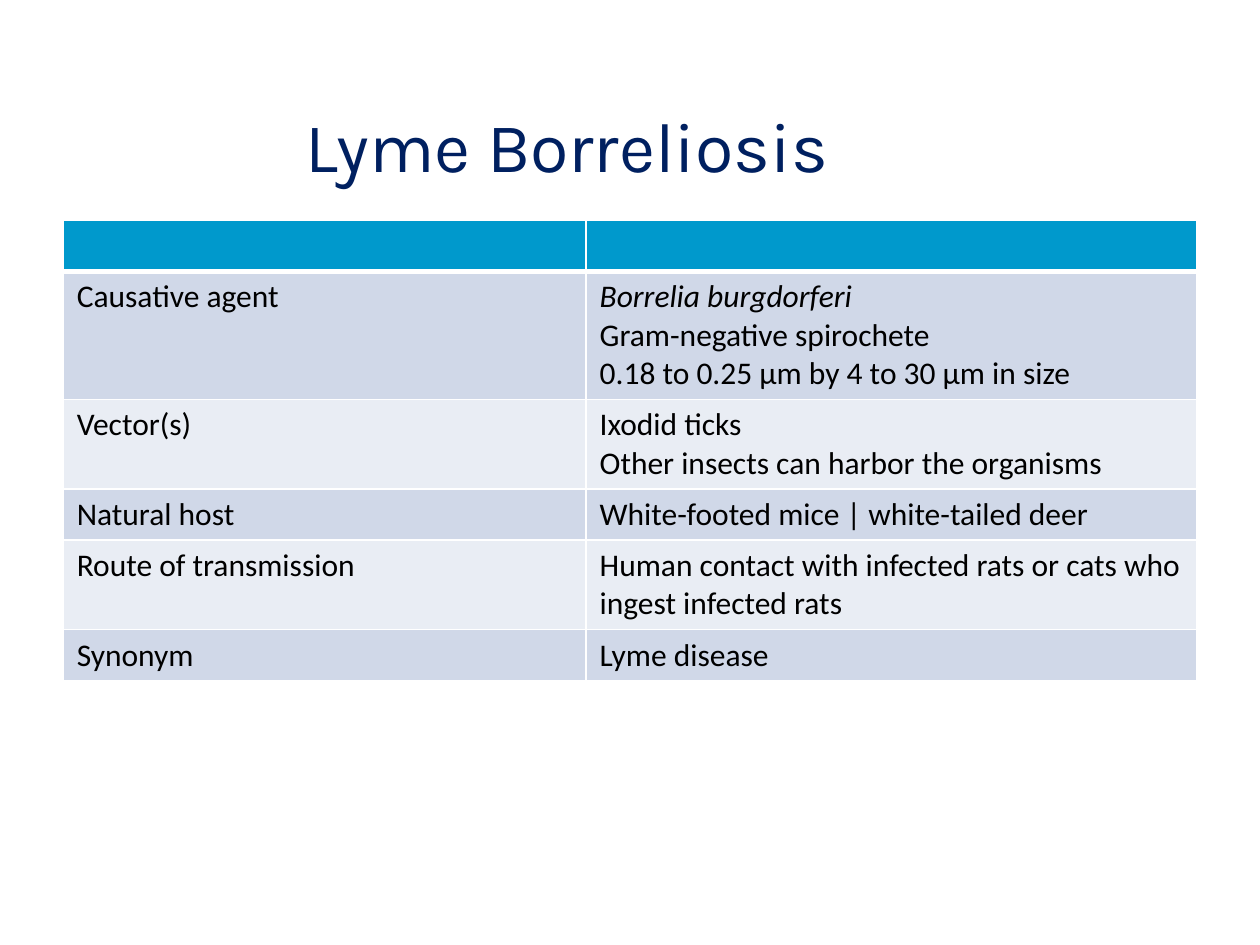
from lxml.etree import SubElement
from pptx import Presentation
from pptx.dml.color import RGBColor
from pptx.enum.text import MSO_ANCHOR, PP_ALIGN
from pptx.oxml.ns import qn
from pptx.util import Pt

HEADER, BAND_DARK, BAND_LIGHT = "0099CC", "D0D8E8", "E9EDF4"
WHITE, BLACK, NAVY = "FFFFFF", "000000", "002060"

COLUMN_WIDTHS = (298.8, 349.2)
ROW_HEIGHTS = (29.2, 72, 50.4, 28.8, 50.4, 29.2)
ROWS = [
    ("", []),
    ("Causative agent", ["Borrelia burgdorferi", "Gram-negative spirochete",
                         "0.18 to 0.25 μm by 4 to 30 μm in size"]),
    ("Vector(s)", ["Ixodid ticks", "Other insects can harbor the organisms"]),
    ("Natural host", ["White-footed mice | white-tailed deer"]),
    ("Route of transmission",
     ["Human contact with infected rats or cats who ingest infected rats"]),
    ("Synonym", ["Lyme disease"]),
]
ITALIC_TEXTS = {"Borrelia burgdorferi"}


def color(hex_string):
    return RGBColor.from_string(hex_string)


def write_text(paragraph, text, *, font="Calibri", size=18, fill=BLACK,
               italic=False, align=PP_ALIGN.LEFT):
    paragraph.alignment = align
    if not text:
        # The end mark keeps an empty line at the right height
        SubElement(paragraph._p, qn("a:endParaRPr"), sz=str(size * 100))
        return
    run = paragraph.add_run()
    run.text = text
    run.font.name = font
    run.font.size = Pt(size)
    run.font.bold = False
    run.font.italic = italic
    run.font.color.rgb = color(fill)


def set_borders(cell, **widths):
    properties = cell._tc.get_or_add_tcPr()
    for position, side in enumerate(("L", "R", "T", "B")):
        line = properties.makeelement(
            qn(f"a:ln{side}"), {"w": str(Pt(widths.get(side, 1)))})
        fill = SubElement(line, qn("a:solidFill"))
        SubElement(fill, qn("a:srgbClr"), val=WHITE)
        properties.insert(position, line)


def fill_cell(cell, lines, fill, **border_widths):
    cell.fill.solid()
    cell.fill.fore_color.rgb = color(fill)
    cell.margin_left = cell.margin_right = Pt(7.9)
    cell.margin_top = cell.margin_bottom = Pt(3.6)
    cell.vertical_anchor = MSO_ANCHOR.TOP
    frame = cell.text_frame
    for index, text in enumerate(lines or [""]):
        paragraph = frame.add_paragraph() if index else frame.paragraphs[0]
        write_text(paragraph, text, italic=text in ITALIC_TEXTS)
    set_borders(cell, **border_widths)


def add_title(slide, text):
    title = slide.shapes.title
    title.left, title.top, title.width, title.height = (
        Pt(54), Pt(7.9), Pt(540), Pt(149.8))
    title.text_frame.vertical_anchor = MSO_ANCHOR.MIDDLE
    write_text(title.text_frame.paragraphs[0], text, font="Karla", size=40,
               fill=NAVY, align=PP_ALIGN.CENTER)


def add_facts_table(slide):
    table = slide.shapes.add_table(
        len(ROWS), len(COLUMN_WIDTHS), Pt(36), Pt(126),
        Pt(sum(COLUMN_WIDTHS)), Pt(sum(ROW_HEIGHTS))).table
    for column, width in zip(table.columns, COLUMN_WIDTHS):
        column.width = Pt(width)
    for index, (label, facts) in enumerate(ROWS):
        table.rows[index].height = Pt(ROW_HEIGHTS[index])
        # Header row, then alternating bands; a thick rule below the header
        fill = HEADER if index == 0 else (BAND_LIGHT, BAND_DARK)[index % 2]
        borders = {0: {"B": 3}, 1: {"T": 3}}.get(index, {})
        fill_cell(table.cell(index, 0), [label], fill, **borders)
        fill_cell(table.cell(index, 1), facts, fill, **borders)


def main():
    presentation = Presentation()
    presentation.slide_width, presentation.slide_height = Pt(720), Pt(540)
    slide = presentation.slides.add_slide(presentation.slide_layouts[5])
    slide.background.fill.solid()
    slide.background.fill.fore_color.rgb = color(WHITE)
    add_title(slide, "Lyme Borreliosis")
    add_facts_table(slide)
    presentation.save("out.pptx")


if __name__ == "__main__":
    main()
